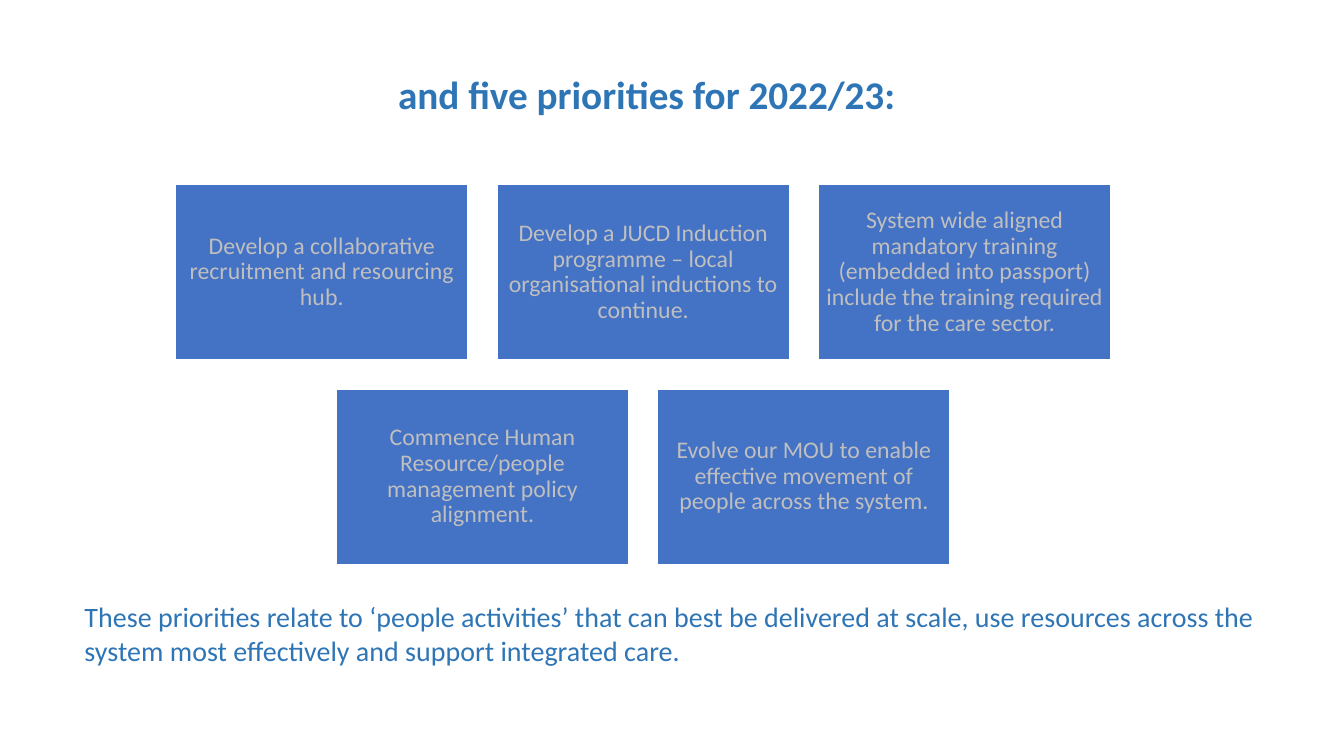
from pptx import Presentation
from pptx.dml.color import RGBColor
from pptx.enum import shapes, text
from pptx.util import Cm, Pt

HEADING = "and five priorities for 2022/23:"
PRIORITY_ROWS = [
    [
        "Develop a collaborative recruitment and resourcing hub.",
        "Develop a JUCD Induction programme – local organisational inductions to continue.",
        "System wide aligned mandatory training (embedded into passport) "
        "include the training required for the care sector.",
    ],
    [
        "Commence Human Resource/people management policy alignment.",
        "Evolve our MOU to enable effective movement of people across the system.",
    ],
]
RATIONALE = (
    "These priorities relate to ‘people activities’ that can best be delivered at scale, "
    "use resources across the system most effectively and support integrated care."
)
COLOURS = {"heading": "2E75B6", "card": "4472C4", "card_text": "BFBFBF", "edge": "FFFFFF"}

CARD_WIDTH, CARD_HEIGHT, GAP = 7.37, 4.42, 0.73
GRID_CENTRE, GRID_TOP = 16.21, 4.65
CARD_INSET = 0.17


def colour(name):
    return RGBColor.from_string(COLOURS[name])


def write(shape, words, size, colour_name, align, anchor, bold=False, spacing=1.0):
    frame = shape.text_frame
    frame.word_wrap = True
    frame.vertical_anchor = anchor
    paragraph = frame.paragraphs[0]
    paragraph.text = words
    paragraph.alignment = align
    paragraph.line_spacing = spacing
    font = paragraph.font
    font.name, font.size, font.bold = "Calibri", Pt(size), bold
    font.color.rgb = colour(colour_name)
    return frame


def add_priority(slide, words, left, top):
    card = slide.shapes.add_shape(
        shapes.MSO_SHAPE.RECTANGLE, Cm(left), Cm(top), Cm(CARD_WIDTH), Cm(CARD_HEIGHT)
    )
    card.shadow.inherit = False
    card.fill.solid()
    card.fill.fore_color.rgb = colour("card")
    card.line.color.rgb = colour("edge")
    card.line.width = Pt(1)
    frame = write(card, words, 17, "card_text", text.PP_ALIGN.CENTER,
                  text.MSO_ANCHOR.MIDDLE, spacing=0.9)
    frame.margin_left = frame.margin_right = Cm(CARD_INSET)
    frame.margin_top = frame.margin_bottom = Cm(CARD_INSET)


def main():
    deck = Presentation()
    deck.slide_width, deck.slide_height = Cm(33.87), Cm(19.05)
    slide = deck.slides.add_slide(deck.slide_layouts[6])

    heading = slide.shapes.add_textbox(Cm(2.34), Cm(0.4), Cm(27.91), Cm(4.06))
    write(heading, HEADING, 28, "heading", text.PP_ALIGN.CENTER,
          text.MSO_ANCHOR.MIDDLE, bold=True, spacing=0.9)

    for row, priorities in enumerate(PRIORITY_ROWS):
        row_width = len(priorities) * (CARD_WIDTH + GAP) - GAP
        row_left = GRID_CENTRE - row_width / 2
        top = GRID_TOP + row * (CARD_HEIGHT + GAP)
        for column, words in enumerate(priorities):
            add_priority(slide, words, row_left + column * (CARD_WIDTH + GAP), top)

    rationale = slide.shapes.add_textbox(Cm(1.88), Cm(14.99), Cm(30.07), Cm(2.82))
    write(rationale, RATIONALE, 20, "heading", text.PP_ALIGN.LEFT, text.MSO_ANCHOR.TOP)

    deck.save("out.pptx")


if __name__ == "__main__":
    main()
